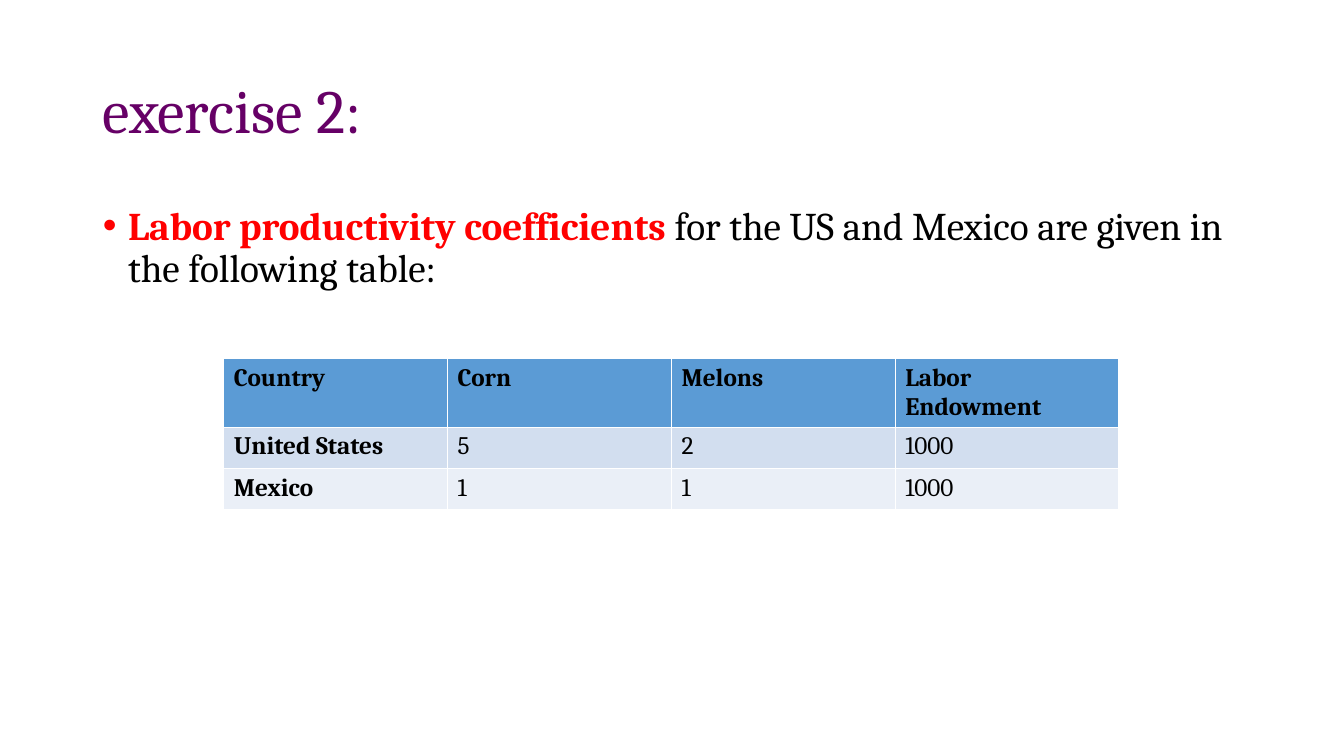
from dataclasses import dataclass

from lxml.etree import SubElement
from pptx import Presentation
from pptx.dml.color import RGBColor
from pptx.enum.text import MSO_ANCHOR, MSO_AUTO_SIZE, PP_ALIGN
from pptx.oxml.ns import qn
from pptx.util import Inches, Pt

TITLE = "exercise 2:"
KEY_TERM = "Labor productivity coefficients "
STATEMENT = "for the US and Mexico are given in the following table:"
PRODUCTIVITY = [
    ("Country", "Corn", "Melons", "Labor Endowment"),
    ("United States", "5", "2", "1000"),
    ("Mexico", "1", "1", "1000"),
]

TITLE_BOX = (0.92, 0.4, 11.5, 1.45)
BODY_BOX = (0.92, 2, 11.5, 4.76)
TABLE_LEFT, TABLE_TOP, COLUMN_WIDTH = 2.22, 3.56, 2.22
ROW_HEIGHTS = (0.67, 0.41, 0.41)
BULLET_INDENT = 0.25


@dataclass(frozen=True)
class Theme:
    font: str = "Cambria"
    title_size: int = 44
    body_size: int = 28
    table_size: int = 18
    title: str = "660066"
    key_term: str = "FF0000"
    text: str = "000000"
    row_fills: tuple = ("5B9BD5", "D2DEEF", "EAEFF7")


THEME = Theme()


def add_run(paragraph, text, size, color, bold=False):
    run = paragraph.add_run()
    run.text = text
    font_format = {"name": THEME.font, "size": Pt(size), "bold": bold}
    for attribute, value in font_format.items():
        setattr(run.font, attribute, value)
    run.font.color.rgb = RGBColor.from_string(color)


def prepare_placeholder(shape, box, anchor):
    """Place the placeholder and return its first paragraph, ready for runs."""
    for attribute, value in zip(("left", "top", "width", "height"), box):
        setattr(shape, attribute, Inches(value))
    frame_format = {
        "word_wrap": True,
        "auto_size": MSO_AUTO_SIZE.NONE,
        "vertical_anchor": anchor,
    }
    for attribute, value in frame_format.items():
        setattr(shape.text_frame, attribute, value)
    paragraph = shape.text_frame.paragraphs[0]
    paragraph.alignment = PP_ALIGN.LEFT
    paragraph.line_spacing = 0.9
    return paragraph


def add_bullet(paragraph):
    properties = paragraph._p.get_or_add_pPr()
    properties.set("marL", str(Inches(BULLET_INDENT)))
    properties.set("indent", str(-Inches(BULLET_INDENT)))
    SubElement(properties, qn("a:buFont"), typeface="Arial")
    SubElement(properties, qn("a:buChar"), char="•")


def add_productivity_table(slide):
    column_count = len(PRODUCTIVITY[0])
    table = slide.shapes.add_table(
        len(PRODUCTIVITY), column_count,
        Inches(TABLE_LEFT), Inches(TABLE_TOP),
        Inches(COLUMN_WIDTH * column_count), Inches(sum(ROW_HEIGHTS)),
    ).table
    for column in table.columns:
        column.width = Inches(COLUMN_WIDTH)
    for row_index, values in enumerate(PRODUCTIVITY):
        table.rows[row_index].height = Inches(ROW_HEIGHTS[row_index])
        for column_index, value in enumerate(values):
            cell = table.cell(row_index, column_index)
            cell.fill.solid()
            cell.fill.fore_color.rgb = RGBColor.from_string(THEME.row_fills[row_index])
            is_heading = row_index == 0 or column_index == 0
            add_run(cell.text_frame.paragraphs[0], value,
                    THEME.table_size, THEME.text, is_heading)


def main():
    presentation = Presentation()
    presentation.slide_width = Inches(13.33)
    presentation.slide_height = Inches(7.5)
    slide = presentation.slides.add_slide(presentation.slide_layouts[1])

    title = prepare_placeholder(slide.shapes.title, TITLE_BOX, MSO_ANCHOR.MIDDLE)
    add_run(title, TITLE, THEME.title_size, THEME.title)

    body = prepare_placeholder(slide.placeholders[1], BODY_BOX, MSO_ANCHOR.TOP)
    body.space_before = Pt(10)
    add_bullet(body)
    add_run(body, KEY_TERM, THEME.body_size, THEME.key_term, bold=True)
    add_run(body, STATEMENT, THEME.body_size, THEME.text)

    add_productivity_table(slide)
    presentation.save("out.pptx")


if __name__ == "__main__":
    main()
